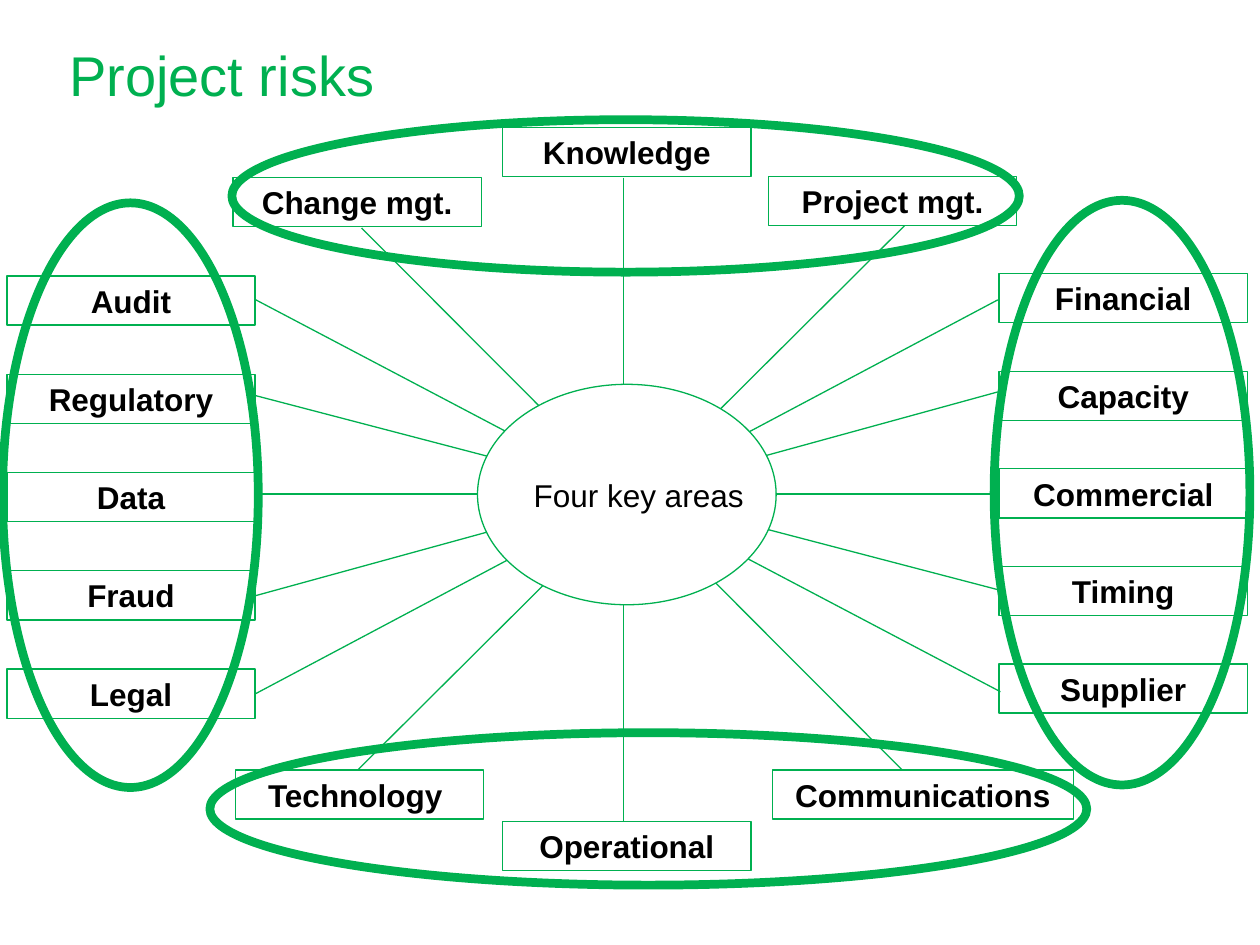
import pptx
import pptx.util
import pptx.dml.color
import pptx.enum.shapes
import pptx.enum.text
import pptx.oxml.ns
from lxml import etree

GREEN = pptx.dml.color.RGBColor(0x00, 0xB0, 0x50)
BLACK = pptx.dml.color.RGBColor(0, 0, 0)
WHITE = pptx.dml.color.RGBColor(255, 255, 255)
KIND = pptx.enum.shapes.MSO_SHAPE
ALIGN = pptx.enum.text.PP_ALIGN
MID = pptx.enum.text.MSO_ANCHOR.MIDDLE

TITLE = ("Project risks", (5.5, 3.73, 87.8, 9.07))
HUB = ("Four key areas", (37.9, 40.67, 23.7, 23.33))
CELL = (19.7, 5.2)
SIDES = [
    (0.55, 29.2, 10.4, ["Audit", "Regulatory", "Data", "Fraud", "Legal"]),
    (79.3, 28.95, 10.33, ["Financial", "Capacity", "Commercial", "Timing", "Supplier"]),
]
ENDS = [
    ("Change mgt.", 18.5, 18.8, 19.7),
    ("Knowledge", 39.9, 13.47, 19.7),
    ("Project mgt.", 61, 18.67, 19.7),
    ("Technology ", 18.7, 81.47, 19.7),
    ("Operational", 39.9, 86.93, 19.7),
    ("Communications", 61.3, 81.47, 23.9),
]
SPOKES = [
    (49.5, 18.8, 49.5, 86.93),
    (20.2, 52.27, 79, 52.27),
    (28.7, 24.13, 71.6, 81.47),
    (28.4, 81.47, 71.8, 23.87),
    (20.3, 31.73, 79.4, 73.2),
    (20.2, 73.47, 79.2, 31.73),
    (20.3, 41.87, 79.2, 62.4),
    (20.2, 63.07, 79.2, 41.47),
]
HOOPS = [
    ((0.2, 21.47, 20.3, 61.87), 0),
    ((43.6, -20.93, 12.1, 83.33), 90),
    ((78.9, 21.2, 20.3, 61.87), 0),
    ((45.4, 39.2, 12.1, 92.8), 90),
]
PLAIN = {"name": "Arial", "size": pptx.util.Pt(18), "bold": False}
BOLD = {**PLAIN, "bold": True}
LARGE = {**PLAIN, "size": pptx.util.Pt(32)}

deck = pptx.Presentation()
deck.slide_width = pptx.util.Inches(10)
deck.slide_height = pptx.util.Inches(7.5)
slide = deck.slides.add_slide(deck.slide_layouts[5])


def scale(area):
    sides = (deck.slide_width, deck.slide_height) * 2
    return [round(part * side / 100) for part, side in zip(area, sides)]


def write(shape, text, look, ink, align, wrap=True):
    frame = shape.text_frame
    frame.text = text
    frame.word_wrap = wrap
    frame.vertical_anchor = MID
    para = frame.paragraphs[0]
    para.alignment = align
    font = para.runs[0].font
    for key, value in look.items():
        setattr(font, key, value)
    font.color.rgb = ink


def stroke(shape, width=0.75):
    shape.line.color.rgb = GREEN
    shape.line.width = pptx.util.Pt(width)


def draw(kind, area, width=0.75):
    shape = slide.shapes.add_shape(kind, *scale(area))
    shape.shadow.inherit = False
    shape.fill.background()
    stroke(shape, width)
    return shape


title = slide.shapes.title
title.left, title.top, title.width, title.height = scale(TITLE[1])
write(title, TITLE[0], LARGE, GREEN, ALIGN.LEFT)
frame = title.text_frame
for side in ("left", "top", "right", "bottom"):
    setattr(frame, "margin_" + side, 0)
frame.paragraphs[0].line_spacing = 0.9

risks = ENDS + [
    (name, left, top + row * step, CELL[0])
    for left, top, step, names in SIDES
    for row, name in enumerate(names)
]
for name, left, top, width in risks:
    box = draw(KIND.RECTANGLE, (left, top, width, CELL[1]))
    write(box, name, BOLD, BLACK, ALIGN.CENTER)

for ends in SPOKES:
    spoke = slide.shapes.add_connector(
        pptx.enum.shapes.MSO_CONNECTOR.STRAIGHT, *scale(ends)
    )
    stroke(spoke)
    etree.SubElement(spoke._element.spPr, pptx.oxml.ns.qn("a:effectLst"))

hub = draw(KIND.OVAL, HUB[1])
hub.fill.solid()
hub.fill.fore_color.rgb = WHITE
write(hub, HUB[0], PLAIN, BLACK, ALIGN.LEFT, False)

for area, turn in HOOPS:
    hoop = draw(KIND.OVAL, area, 5)
    hoop.rotation = turn

deck.save("out.pptx")
